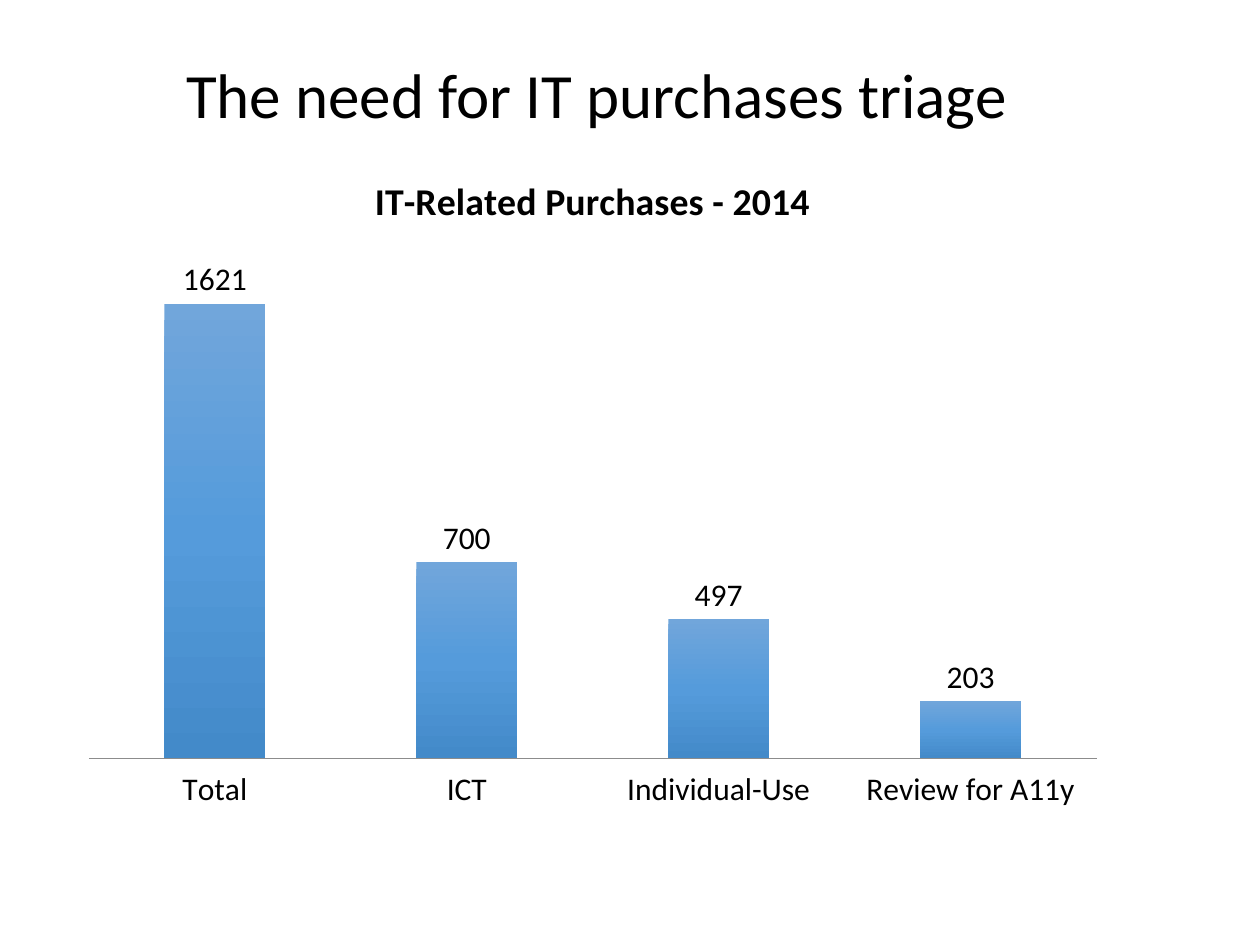
"""Build the slide on the need for triage of IT purchases."""
from dataclasses import dataclass

from lxml.etree import SubElement
from pptx import Presentation
from pptx.chart.data import CategoryChartData
from pptx.dml.color import RGBColor
from pptx.enum.chart import XL_CHART_TYPE, XL_LABEL_POSITION, XL_TICK_LABEL_POSITION, XL_TICK_MARK
from pptx.enum.text import MSO_ANCHOR, PP_ALIGN
from pptx.oxml.ns import qn
from pptx.util import Cm, Pt

TITLE = "The need for IT purchases triage"
NAME = "IT-Related Purchases - 2014"
COUNTS = {"Total": 1621, "ICT": 700, "Individual-Use": 497, "Review for A11y": 203}
TOP = 1800

SIZE = (25.4, 19.05)
HEAD = (3.5, 0.13, 21.9, 3.68)
CHART = (1.37, 2.97, 21.16, 13.39)
PLOT = {"x": 0.02, "y": 0.16, "w": 0.96, "h": 0.76}


@dataclass(frozen=True)
class Theme:
    """Hold the colours, font and type sizes."""
    font: str = "Calibri"
    ink: str = "000000"
    line: str = "8C8C8C"
    fade: tuple = ((0, "71A6DB"), (50, "559BDB"), (100, "438AC9"))
    head: float = 36
    name: float = 21.6
    label: float = 18


THEME = Theme()


def style(font, size, bold=False):
    """Give a font the look of the theme."""
    font.name, font.size, font.bold = THEME.font, Pt(size), bold
    font.color.rgb = RGBColor.from_string(THEME.ink)


def write(frame, text, size, bold=False, align=PP_ALIGN.LEFT, space=1.0):
    """Write one paragraph of formatted text."""
    frame.text = text
    para = frame.paragraphs[0]
    para.alignment, para.line_spacing = align, space
    style(para.runs[0].font, size, bold)


def shade(fill):
    """Fill from top to bottom with the fade colours."""
    fill.gradient()
    fill.gradient_angle = 270
    grad = fill.gradient_stops[0]._gs.getparent()
    for stop in list(grad):
        grad.remove(stop)
    for place, tone in THEME.fade:
        stop = SubElement(grad, qn("a:gs"), pos=str(place * 1000))
        SubElement(stop, qn("a:srgbClr"), val=tone)


def fix(chart):
    """Set the inner plot area as shares of the chart."""
    area = chart._chartSpace.chart.plotArea
    for old in area.findall(qn("c:layout")):
        area.remove(old)
    frame = SubElement(area, qn("c:layout"))
    area.insert(0, frame)
    box = SubElement(frame, qn("c:manualLayout"))
    rules = {"layoutTarget": "inner", "xMode": "edge", "yMode": "edge", **PLOT}
    for key, val in rules.items():
        SubElement(box, qn(f"c:{key}"), val=str(val))


def draw(slide):
    """Add the column chart."""
    data = CategoryChartData()
    data.categories = list(COUNTS)
    data.add_series(NAME, list(COUNTS.values()))
    chart = slide.shapes.add_chart(
        XL_CHART_TYPE.COLUMN_CLUSTERED, *map(Cm, CHART), data).chart
    style(chart.font, THEME.label)
    chart.has_legend = False
    chart.has_title = True
    write(chart.chart_title.text_frame, NAME, size=THEME.name, bold=True,
          align=PP_ALIGN.CENTER)
    chart.chart_title.include_in_layout = False

    values, names = chart.value_axis, chart.category_axis
    values.minimum_scale, values.maximum_scale = 0, TOP
    values.has_major_gridlines = False
    values.visible = False
    names.major_tick_mark = names.minor_tick_mark = XL_TICK_MARK.NONE
    names.tick_label_position = XL_TICK_LABEL_POSITION.LOW
    names.format.line.color.rgb = RGBColor.from_string(THEME.line)
    names.format.line.width = Pt(0.75)

    plot = chart.plots[0]
    plot.gap_width, plot.overlap = 150, -25
    plot.vary_by_categories = False
    plot.has_data_labels = True
    labels = plot.data_labels
    labels.show_value = True
    labels.position = XL_LABEL_POSITION.OUTSIDE_END
    style(labels.font, THEME.label)
    shade(plot.series[0].format.fill)
    fix(chart)


def main():
    """Build and save the slide."""
    deck = Presentation()
    deck.slide_width, deck.slide_height = map(Cm, SIZE)
    slide = deck.slides.add_slide(deck.slide_layouts[5])
    head = slide.shapes.title
    head.left, head.top, head.width, head.height = map(Cm, HEAD)
    head.text_frame.vertical_anchor = MSO_ANCHOR.MIDDLE
    write(head.text_frame, TITLE, size=THEME.head, space=0.9)
    draw(slide)
    deck.save("out.pptx")


if __name__ == "__main__":
    main()
